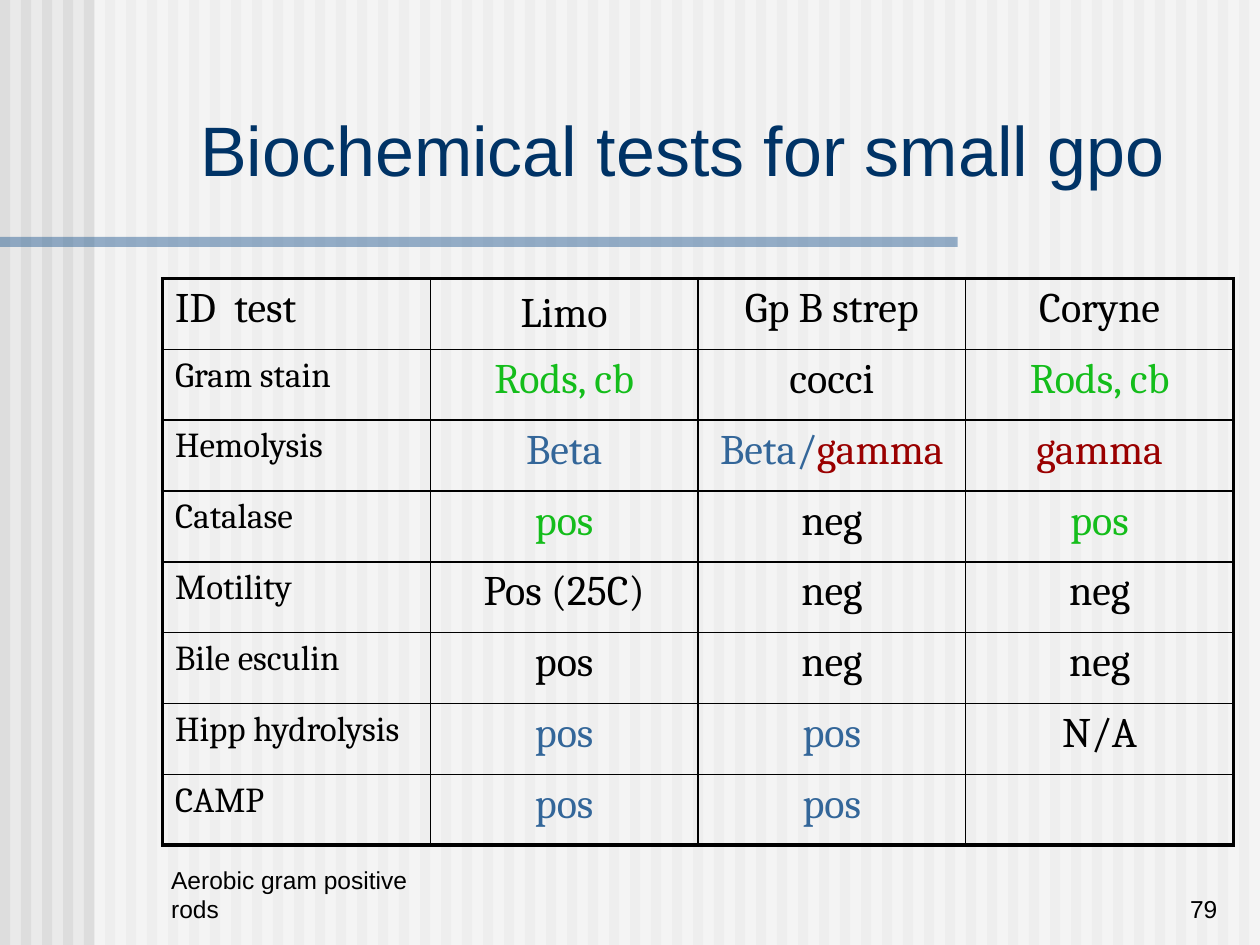
from lxml import etree
from pptx import Presentation
from pptx.dml.color import RGBColor
from pptx.enum.shapes import MSO_SHAPE
from pptx.enum.text import MSO_ANCHOR, PP_ALIGN
from pptx.oxml.ns import qn
from pptx.util import Inches, Pt

RECTANGLE = MSO_SHAPE.RECTANGLE
LEFT, CENTER, RIGHT = PP_ALIGN.LEFT, PP_ALIGN.CENTER, PP_ALIGN.RIGHT
TOP, MIDDLE, BOTTOM = MSO_ANCHOR.TOP, MSO_ANCHOR.MIDDLE, MSO_ANCHOR.BOTTOM

COLORS = {
    "background": "EAEAEA",
    "stripe": "DDDDDD",
    "white": "FFFFFF",
    "title": "003366",
    "black": "000000",
    "green": "14BD1B",
    "blue": "336699",
    "red": "9A0000",
}

# Each result is a list of (text, color) runs
GREEN_RODS = [("Rods, cb", "green")]
GREEN_POS = [("pos", "green")]
BLUE_POS = [("pos", "blue")]
POS = [("pos", "black")]
NEG = [("neg", "black")]
TABLE_ROWS = [
    ("ID  test", [("Limo", "black")], [("Gp B strep", "black")], [("Coryne", "black")]),
    ("Gram stain", GREEN_RODS, [("cocci", "black")], GREEN_RODS),
    ("Hemolysis", [("Beta", "blue")], [("Beta/", "blue"), ("gamma", "red")], [("gamma", "red")]),
    ("Catalase", GREEN_POS, NEG, GREEN_POS),
    ("Motility", [("Pos (25C)", "black")], NEG, NEG),
    ("Bile esculin", POS, NEG, NEG),
    ("Hipp hydrolysis", BLUE_POS, BLUE_POS, [("N/A", "black")]),
    ("CAMP", BLUE_POS, BLUE_POS, []),
]


def rgb(name):
    return RGBColor.from_string(COLORS[name])


class SlideBuilder:
    heading_font = "Arial"
    table_font = "Cambria"
    outer_border, inner_border = 2.25, 1

    def __init__(self, slide):
        self.slide = slide

    def background(self, color):
        fill = self.slide.background.fill
        fill.solid()
        fill.fore_color.rgb = rgb(color)

    def rectangle(self, left, top, width, height, color, opacity=100):
        shape = self.slide.shapes.add_shape(
            RECTANGLE, Inches(left), Inches(top), Inches(width), Inches(height))
        shape.shadow.inherit = False
        shape.line.fill.background()
        shape.fill.solid()
        shape.fill.fore_color.rgb = rgb(color)
        if opacity < 100:
            color_element = shape.fill._xPr.find(".//" + qn("a:srgbClr"))
            etree.SubElement(color_element, qn("a:alpha"), val=str(opacity * 1000))

    def style_run(self, run, font, size, color):
        run.font.name = font
        run.font.size = Pt(size)
        run.font.color.rgb = rgb(color)

    def text(self, left, top, width, height, text, size, color, align, anchor):
        box = self.slide.shapes.add_textbox(
            Inches(left), Inches(top), Inches(width), Inches(height))
        frame = box.text_frame
        frame.word_wrap = True
        frame.vertical_anchor = anchor
        frame.text = text
        paragraph = frame.paragraphs[0]
        paragraph.alignment = align
        self.style_run(paragraph.runs[0], self.heading_font, size, color)

    def cell_borders(self, cell, widths):
        properties = cell._tc.get_or_add_tcPr()
        for position, (side, width) in enumerate(widths.items()):
            line = etree.Element(qn("a:" + side), w=str(Pt(width)))
            fill = etree.SubElement(line, qn("a:solidFill"))
            etree.SubElement(fill, qn("a:srgbClr"), val=COLORS["black"])
            properties.insert(position, line)

    def cell(self, cell, runs, size, align, anchor):
        cell.fill.background()
        cell.vertical_anchor = anchor
        paragraph = cell.text_frame.paragraphs[0]
        paragraph.alignment = align
        for text, color in runs:
            run = paragraph.add_run()
            run.text = text
            self.style_run(run, self.table_font, size, color)

    def table(self, left, top, width, height, rows):
        last_row, last_column = len(rows) - 1, len(rows[0]) - 1
        table = self.slide.shapes.add_table(
            len(rows), len(rows[0]),
            Inches(left), Inches(top), Inches(width), Inches(height)).table
        table.first_row = table.horz_banding = False
        for r, (label, *results) in enumerate(rows):
            for c, runs in enumerate([[(label, "black")], *results]):
                cell = table.cell(r, c)
                self.cell(
                    cell, runs,
                    size=20 if c == 0 and r > 0 else 24,
                    align=LEFT if c == 0 else CENTER,
                    anchor=MIDDLE if (r, c) == (0, 1) else TOP)
                edges = {"lnL": c == 0, "lnR": c == last_column,
                         "lnT": r == 0, "lnB": r == last_row}
                self.cell_borders(cell, {
                    side: self.outer_border if outer else self.inner_border
                    for side, outer in edges.items()})


def main():
    presentation = Presentation()
    presentation.slide_width = Inches(10)
    presentation.slide_height = Inches(7.5)
    builder = SlideBuilder(presentation.slides.add_slide(presentation.slide_layouts[6]))

    # Striped backdrop, veiled to the right of the margin
    builder.background("background")
    for stripe in range(60):
        builder.rectangle(stripe / 6, 0, 0.08, 7.5, "stripe")
    builder.rectangle(0.75, 0, 9.25, 7.5, "white", opacity=50)
    builder.rectangle(0, 1.88, 7.6, 0.08, "blue", opacity=50)

    # Title
    builder.text(0.95, 0.58, 8.93, 1.19, "Biochemical tests for small gpo",
                 40, "title", CENTER, MIDDLE)

    # Test results
    builder.table(1.29, 2.21, 8.5, 4.5, TABLE_ROWS)

    # Footer and slide number
    builder.text(1.26, 6.88, 2.08, 0.5, "Aerobic gram positive rods",
                 14, "black", LEFT, BOTTOM)
    builder.text(7.68, 6.88, 2.08, 0.5, "79", 14, "black", RIGHT, BOTTOM)

    presentation.save("out.pptx")


if __name__ == "__main__":
    main()
